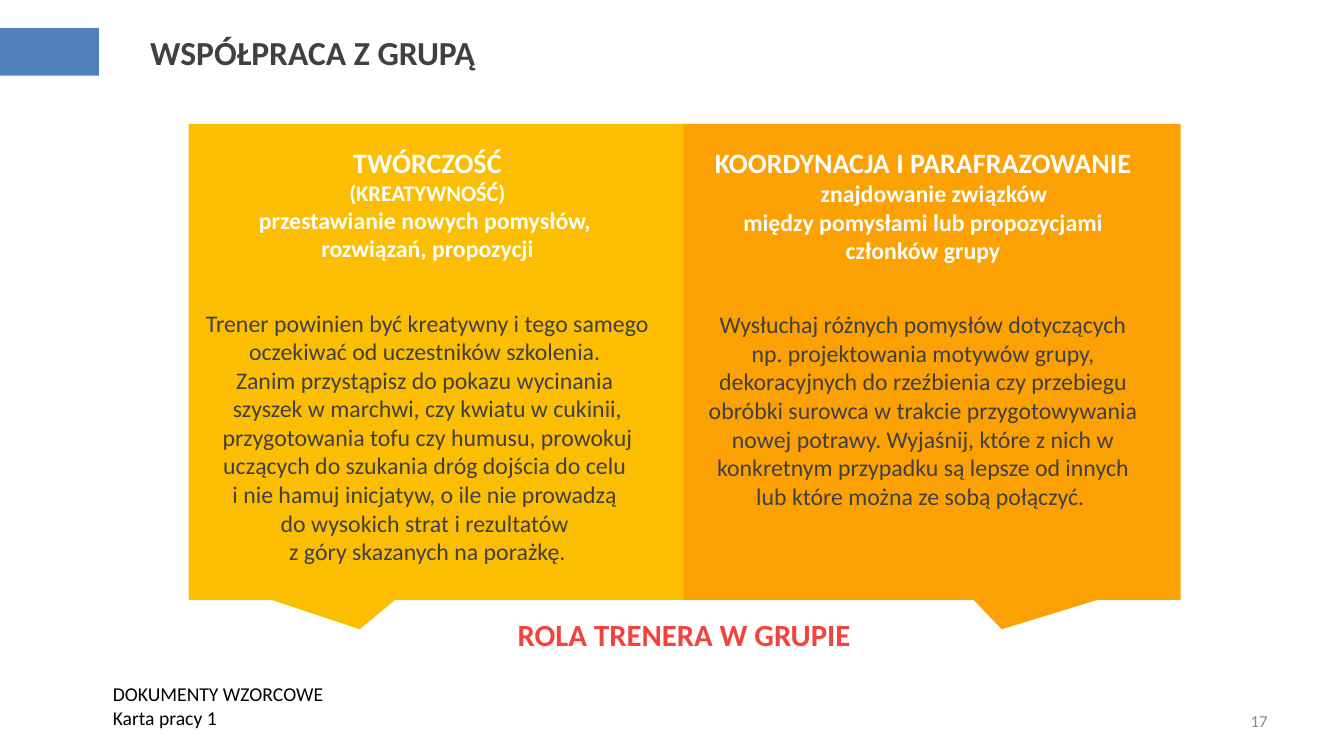
from copy import deepcopy
from dataclasses import dataclass

from pptx import Presentation
from pptx.dml.color import RGBColor
from pptx.enum.shapes import MSO_SHAPE
from pptx.enum.text import MSO_ANCHOR, PP_ALIGN
from pptx.slide import Slide
from pptx.util import Inches, Pt

BLUE = RGBColor(0x4F, 0x81, 0xBD)
YELLOW = RGBColor(0xFB, 0xBE, 0x03)
ORANGE = RGBColor(0xFB, 0xA1, 0x03)
RED = RGBColor(0xF4, 0x43, 0x3E)
WHITE = RGBColor(0xFF, 0xFF, 0xFF)
BLACK = RGBColor(0x00, 0x00, 0x00)
DARK = RGBColor(0x40, 0x40, 0x40)
GRAY = RGBColor(0x89, 0x89, 0x89)

FONT = "Calibri"
Box = tuple[float, float, float, float]


@dataclass
class Para:
    text: str
    size: float
    color: RGBColor
    bold: bool = False
    after: float = 0
    indent: float = 0  # first line, in inches


@dataclass
class Card:
    box: Box
    fill: RGBColor
    tip: float
    area: Box
    paras: list[Para]


def add_text(slide: Slide, box: Box, paras: list[Para], *,
             align: PP_ALIGN = PP_ALIGN.LEFT,
             anchor: MSO_ANCHOR = MSO_ANCHOR.TOP) -> None:
    frame = slide.shapes.add_textbox(*map(Inches, box)).text_frame
    frame.word_wrap = True
    frame.vertical_anchor = anchor
    for num, para in enumerate(paras):
        p = frame.add_paragraph() if num else frame.paragraphs[0]
        p.text = para.text
        p.alignment = align
        p.space_after = Pt(para.after)
        if para.indent:
            p._p.get_or_add_pPr().set("indent", str(Inches(para.indent)))
        for run in p.runs:
            run.font.name = FONT
            run.font.size = Pt(para.size)
            run.font.bold = para.bold
            run.font.color.rgb = para.color
        # Line breaks take the size of the text around them
        for br in p._p.findall("{*}br"):
            br.append(deepcopy(p.runs[0]._r.rPr))


def add_block(slide: Slide, kind: MSO_SHAPE, box: Box, fill: RGBColor,
              adjust: tuple[float, ...] = ()) -> None:
    shape = slide.shapes.add_shape(kind, *map(Inches, box))
    shape.shadow.inherit = False
    shape.fill.solid()
    shape.fill.fore_color.rgb = fill
    shape.line.fill.background()
    for num, value in enumerate(adjust):
        shape.adjustments[num] = value


CARDS = [
    Card((1.87, 1.23, 4.92, 4.72), YELLOW, -0.155, (1.86, 1.39, 4.76, 4.48), [
        Para("TWÓRCZOŚĆ", 20, WHITE, True),
        Para("(KREATYWNOŚĆ)", 16, WHITE, True),
        Para("przestawianie nowych pomysłów, \nrozwiązań, propozycji",
             17, WHITE, True, after=32.5),
        Para("Trener powinien być kreatywny i tego samego oczekiwać od "
             "uczestników szkolenia. \n"
             "Zanim przystąpisz do pokazu wycinania \n"
             "szyszek w marchwi, czy kwiatu w cukinii, przygotowania tofu "
             "czy humusu, prowokuj uczących do szukania dróg dojścia do celu \n"
             "i nie hamuj inicjatyw, o ile nie prowadzą \n"
             "do wysokich strat i rezultatów \n"
             "z góry skazanych na porażkę.", 17, DARK),
    ]),
    Card((6.78, 1.23, 4.93, 4.72), ORANGE, 0.14, (6.87, 1.39, 4.57, 3.75), [
        Para("KOORDYNACJA I PARAFRAZOWANIE", 20, WHITE, True),
        Para("znajdowanie związków \n"
             "między pomysłami lub propozycjami członków grupy",
             17, WHITE, True, after=32.5, indent=0.27),
        Para("Wysłuchaj różnych pomysłów dotyczących np. projektowania "
             "motywów grupy, dekoracyjnych do rzeźbienia czy przebiegu "
             "obróbki surowca w trakcie przygotowywania nowej potrawy. "
             "Wyjaśnij, które z nich w konkretnym przypadku są lepsze od "
             "innych lub które można ze sobą połączyć. ", 17, DARK),
    ]),
]


def main() -> None:
    deck = Presentation()
    deck.slide_width, deck.slide_height = Inches(13.33), Inches(7.5)
    slide = deck.slides.add_slide(deck.slide_layouts[6])

    # Title with its side bar
    add_block(slide, MSO_SHAPE.RECTANGLE, (0, 0.28, 0.98, 0.47), BLUE)
    add_text(slide, (1.39, 0.21, 5.99, 0.62),
             [Para("WSPÓŁPRACA Z GRUPĄ", 24, DARK, True)],
             anchor=MSO_ANCHOR.MIDDLE)

    # Role cards and the label they point to
    for card in CARDS:
        add_block(slide, MSO_SHAPE.RECTANGULAR_CALLOUT, card.box, card.fill,
                  (card.tip, 0.562))
        add_text(slide, card.area, card.paras, align=PP_ALIGN.CENTER)
    add_text(slide, (1.87, 6.06, 9.83, 0.47),
             [Para("ROLA TRENERA W GRUPIE", 22, RED, True)],
             align=PP_ALIGN.CENTER)

    # Footer
    add_text(slide, (1.02, 6.72, 3.22, 0.57),
             [Para("DOKUMENTY WZORCOWE", 14, BLACK),
              Para("Karta pracy 1", 14, BLACK)])
    add_text(slide, (9.56, 6.95, 3.11, 0.4), [Para("17", 12, GRAY)],
             align=PP_ALIGN.RIGHT, anchor=MSO_ANCHOR.MIDDLE)

    deck.save("out.pptx")


if __name__ == "__main__":
    main()
